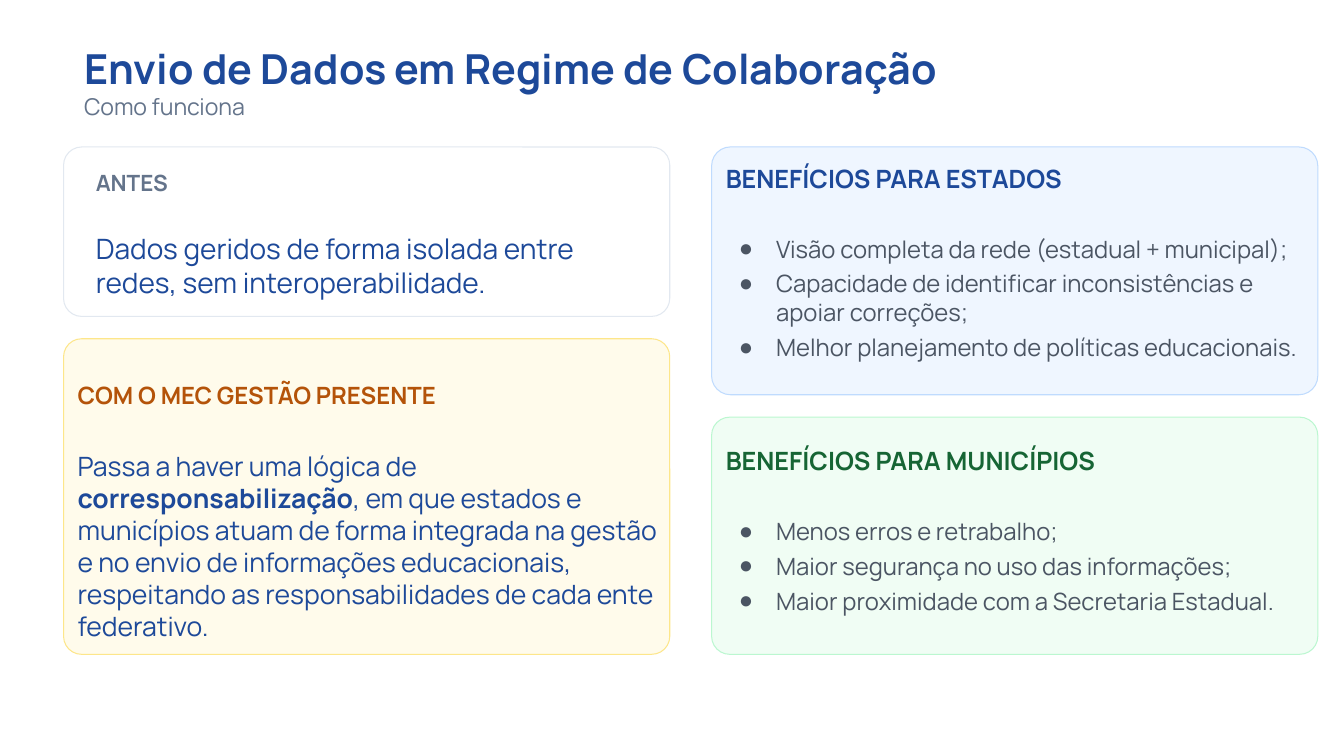
from lxml import etree
from pptx import Presentation
from pptx.dml.color import RGBColor
from pptx.enum.shapes import MSO_SHAPE
from pptx.enum.text import MSO_ANCHOR, MSO_AUTO_SIZE, PP_ALIGN
from pptx.oxml.ns import qn
from pptx.util import Pt

ROUNDED = MSO_SHAPE.ROUNDED_RECTANGLE
TOP, MIDDLE = MSO_ANCHOR.TOP, MSO_ANCHOR.MIDDLE
NO_AUTOFIT = MSO_AUTO_SIZE.NONE
LEFT = PP_ALIGN.LEFT

FONT = "Manrope"
WHITE = RGBColor(0xFF, 0xFF, 0xFF)
BLUE = RGBColor(0x1D, 0x49, 0x99)
SLATE = RGBColor(0x64, 0x74, 0x8B)
GRAY = RGBColor(0x4B, 0x55, 0x63)
BROWN = RGBColor(0xB4, 0x53, 0x09)
GREEN = RGBColor(0x16, 0x65, 0x34)
PALE_SLATE = RGBColor(0xE2, 0xE8, 0xF0)
CREAM = RGBColor(0xFF, 0xFB, 0xEB)
YELLOW = RGBColor(0xFD, 0xE6, 0x8A)
PALE_BLUE = RGBColor(0xEF, 0xF6, 0xFF)
SKY = RGBColor(0xBF, 0xDB, 0xFE)
PALE_GREEN = RGBColor(0xF0, 0xFD, 0xF4)
MINT = RGBColor(0xBB, 0xF7, 0xD0)

CARD_WIDTH, CARD_GAP, CARD_TOP = 433, 16, 105
LEFT_COLUMN, RIGHT_COLUMN = 45.4, 508.3
LIST_INDENT, BULLET_OFFSET = 36, -26.6


class SlideBuilder:
    """Holds the text style and the current slide."""

    def __init__(self, slide, font):
        self.slide = slide
        self.font = font

    def card(self, left, top, height, corner, fill, line):
        shape = self.slide.shapes.add_shape(
            ROUNDED, Pt(left), Pt(top), Pt(CARD_WIDTH), Pt(height))
        shape.adjustments[0] = corner
        shape.shadow.inherit = False
        shape.fill.solid()
        shape.fill.fore_color.rgb = fill
        shape.line.color.rgb = line
        shape.line.width = Pt(0.75)

    def place(self, placeholder, left, top, width, height, anchor=TOP):
        self.slide.shapes._spTree.append(placeholder._element)
        placeholder.left, placeholder.top = Pt(left), Pt(top)
        placeholder.width, placeholder.height = Pt(width), Pt(height)
        frame = placeholder.text_frame
        frame.word_wrap = True
        frame.auto_size = NO_AUTOFIT
        frame.vertical_anchor = anchor
        frame.margin_left = frame.margin_right = 0
        frame.margin_top = frame.margin_bottom = 0
        return frame

    def paragraph(self, frame, runs, size, color, before=0, bullet=False):
        first = frame.paragraphs[0]
        paragraph = frame.add_paragraph() if first.runs else first
        properties = paragraph._p.get_or_add_pPr()
        properties.set("marL", str(Pt(LIST_INDENT) if bullet else 0))
        properties.set("indent", str(Pt(BULLET_OFFSET) if bullet else 0))
        paragraph.alignment = LEFT
        paragraph.space_before = Pt(before)
        if bullet:
            bullet_color = etree.SubElement(properties, qn("a:buClr"))
            etree.SubElement(bullet_color, qn("a:srgbClr"), val=str(color))
            etree.SubElement(properties, qn("a:buChar"), char="●")
        else:
            etree.SubElement(properties, qn("a:buNone"))
        for text, bold in runs:
            run = paragraph.add_run()
            run.text = text
            run.font.name = self.font
            run.font.size = Pt(size)
            run.font.bold = bold
            run.font.color.rgb = color

    def bullets(self, frame, items, before):
        for index, item in enumerate(items):
            self.paragraph(frame, [(item, False)], 17, GRAY,
                           4.5 if index else before, bullet=True)


def main():
    presentation = Presentation()
    presentation.slide_width, presentation.slide_height = Pt(960), Pt(540)
    slide = presentation.slides.add_slide(presentation.slide_layouts[4])
    builder = SlideBuilder(slide, FONT)
    title, before, benefits_states, after, benefits_cities = slide.placeholders

    columns = [
        (LEFT_COLUMN, [(121, 0.107, WHITE, PALE_SLATE),
                       (225.4, 0.057, CREAM, YELLOW)]),
        (RIGHT_COLUMN, [(177, 0.076, PALE_BLUE, SKY),
                        (169.4, 0.076, PALE_GREEN, MINT)]),
    ]
    for left, cards in columns:
        top = CARD_TOP
        for height, corner, fill, line in cards:
            builder.card(left, top, height, corner, fill, line)
            top += height + CARD_GAP

    frame = builder.place(title, 60, 30.4, 840, 56, MIDDLE)
    builder.paragraph(frame, [("Envio de Dados em Regime de Colaboração", True)],
                      29.5, BLUE)
    builder.paragraph(frame, [("Como funciona", False)], 16.5, SLATE)

    frame = builder.place(before, 68.4, 121, 386, 88.6)
    builder.paragraph(frame, [("ANTES", True)], 16, SLATE)
    builder.paragraph(
        frame,
        [("Dados geridos de forma isolada entre redes, sem interoperabilidade.",
          False)],
        20, BLUE, 25.2)

    frame = builder.place(after, 55.4, 271.7, 414, 190)
    builder.paragraph(frame, [("COM O MEC GESTÃO PRESENTE", True)], 17, BROWN)
    builder.paragraph(
        frame,
        [("Passa a haver uma lógica de ", False),
         ("corresponsabilização", True),
         (", em que estados e municípios atuam de forma integrada na gestão "
          "e no envio de informações educacionais, respeitando as "
          "responsabilidades de cada ente federativo.", False)],
        19, BLUE, 29.4)

    frame = builder.place(benefits_states, 518.4, 116.6, 422.6, 150)
    builder.paragraph(frame, [("BENEFÍCIOS PARA ESTADOS", True)], 18, BLUE)
    builder.bullets(frame, [
        "Visão completa da rede (estadual + municipal);",
        "Capacidade de identificar inconsistências e apoiar correções;",
        "Melhor planejamento de políticas educacionais.",
    ], 29.1)

    frame = builder.place(benefits_cities, 518.4, 318.2, 414, 132.5)
    builder.paragraph(frame, [("BENEFÍCIOS PARA MUNICÍPIOS", True)], 18, GREEN)
    builder.bullets(frame, [
        "Menos erros e retrabalho;",
        "Maior segurança no uso das informações;",
        "Maior proximidade com a Secretaria Estadual.",
    ], 29.1)

    presentation.save("out.pptx")


if __name__ == "__main__":
    main()
